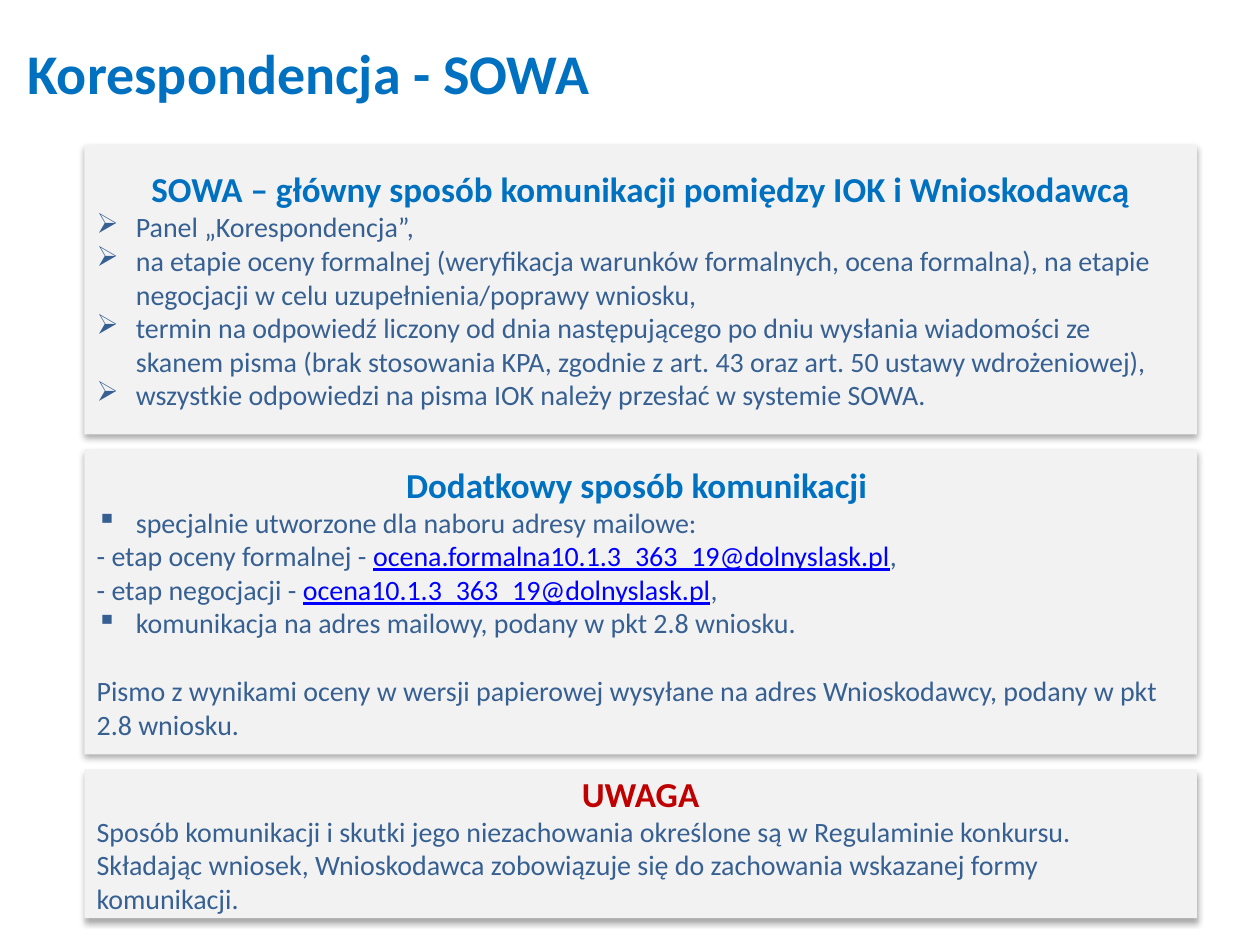
from dataclasses import dataclass

from lxml import etree
from pptx import Presentation
from pptx.dml.color import RGBColor
from pptx.enum.shapes import MSO_SHAPE
from pptx.enum.text import MSO_ANCHOR, MSO_AUTO_SIZE, PP_ALIGN
from pptx.oxml.ns import qn
from pptx.slide import Slide
from pptx.text.text import _Paragraph
from pptx.util import Cm, Length, Pt

RECTANGLE = MSO_SHAPE.RECTANGLE
MIDDLE = MSO_ANCHOR.MIDDLE
FIT_SHAPE = MSO_AUTO_SIZE.SHAPE_TO_FIT_TEXT
LEFT, CENTER = PP_ALIGN.LEFT, PP_ALIGN.CENTER


@dataclass(frozen=True)
class Theme:
    font: str = "Calibri"
    heading: RGBColor = RGBColor(0x00, 0x70, 0xC0)
    warning: RGBColor = RGBColor(0xC0, 0x00, 0x00)
    body: RGBColor = RGBColor(0x37, 0x60, 0x92)
    address: RGBColor = RGBColor(0x00, 0x00, 0xFF)
    panel: RGBColor = RGBColor(0xF2, 0xF2, 0xF2)
    shadow: str = "000000"
    title_size: Length = Pt(32)
    heading_size: Length = Pt(20)
    body_size: Length = Pt(16)
    line_gap: Length = Pt(19.5)


THEME = Theme()
PANEL_LEFT, PANEL_TOP, PANEL_WIDTH, PANEL_GAP = Cm(1.7), Cm(2.92), Cm(22.43), Cm(0.3)
BULLET_INDENT = Cm(0.79)


@dataclass(frozen=True)
class Line:
    text: str
    bullet: str = ""
    address: str = ""
    ending: str = ""
    space_before: Length = Pt(0)


@dataclass(frozen=True)
class Panel:
    height: Length
    heading: str
    color: RGBColor
    lines: tuple[Line, ...]


ARROW, SQUARE = "➢", "▪"
PANELS = (
    Panel(Cm(5.84), "SOWA – główny sposób komunikacji pomiędzy IOK i Wnioskodawcą", THEME.heading, (
        Line("Panel „Korespondencja”,", ARROW),
        Line("na etapie oceny formalnej (weryfikacja warunków formalnych, ocena formalna), "
             "na etapie negocjacji w celu uzupełnienia/poprawy wniosku,", ARROW),
        Line("termin na odpowiedź liczony od dnia następującego po dniu wysłania wiadomości ze skanem "
             "pisma (brak stosowania KPA, zgodnie z art. 43 oraz art. 50 ustawy wdrożeniowej),", ARROW),
        Line("wszystkie odpowiedzi na pisma IOK należy przesłać w systemie SOWA.", ARROW),
    )),
    Panel(Cm(6.15), "Dodatkowy sposób komunikacji ", THEME.heading, (
        Line("specjalnie utworzone dla naboru adresy mailowe:", SQUARE),
        Line("- etap oceny formalnej - ", address="ocena.formalna10.1.3_363_19@dolnyslask.pl", ending=","),
        Line("- etap negocjacji - ", address="ocena10.1.3_363_19@dolnyslask.pl", ending=","),
        Line("komunikacja na adres mailowy, podany w pkt 2.8 wniosku.", SQUARE),
        Line("Pismo z wynikami oceny w wersji papierowej wysyłane na adres Wnioskodawcy, "
             "podany w pkt 2.8 wniosku.", space_before=THEME.line_gap),
    )),
    Panel(Cm(3), "UWAGA", THEME.warning, (
        Line("Sposób komunikacji i skutki jego niezachowania określone są w Regulaminie konkursu. \n"
             "Składając wniosek, Wnioskodawca zobowiązuje się do zachowania wskazanej formy komunikacji."),
    )),
)


def add_run(paragraph: _Paragraph, text: str, size: Length, color: RGBColor,
            bold: bool = False, underline: bool = False) -> None:
    """Add one formatted run, turning newlines into line breaks."""
    for index, part in enumerate(text.split("\n")):
        if index:
            paragraph.add_line_break()
        run = paragraph.add_run()
        run.text = part
        run.font.name, run.font.size = THEME.font, size
        run.font.bold, run.font.underline = bold, underline
        run.font.color.rgb = color


def add_bullet(paragraph: _Paragraph, character: str) -> None:
    """Give a paragraph a hanging bullet."""
    properties = paragraph._p.get_or_add_pPr()
    properties.set("marL", str(BULLET_INDENT))
    properties.set("indent", str(-BULLET_INDENT))
    etree.SubElement(properties, qn("a:buChar"), char=character)


def add_line(paragraph: _Paragraph, line: Line) -> None:
    """Write one body line with its bullet and e-mail address."""
    if line.bullet:
        add_bullet(paragraph, line.bullet)
    paragraph.alignment = LEFT
    paragraph.space_before = line.space_before
    add_run(paragraph, line.text, THEME.body_size, THEME.body)
    if line.address:
        add_run(paragraph, line.address, THEME.body_size, THEME.address, underline=True)
        add_run(paragraph, line.ending, THEME.body_size, THEME.body)


def add_panel(slide: Slide, panel: Panel, top: Length) -> None:
    """Draw a shadowed panel with a heading and body lines."""
    shape = slide.shapes.add_shape(RECTANGLE, PANEL_LEFT, top, PANEL_WIDTH, panel.height)
    shape.fill.solid()
    shape.fill.fore_color.rgb = THEME.panel
    shape.line.fill.background()
    shape.shadow.inherit = False
    effects = shape._element.spPr.find(qn("a:effectLst"))
    shadow = etree.SubElement(effects, qn("a:outerShdw"), blurRad=str(Pt(3.5)), dist=str(Pt(2.2)),
                              dir="5400000", rotWithShape="0")
    color = etree.SubElement(shadow, qn("a:srgbClr"), val=THEME.shadow)
    etree.SubElement(color, qn("a:alpha"), val="32000")
    frame = shape.text_frame
    frame.word_wrap = True
    frame.vertical_anchor = MIDDLE
    heading = frame.paragraphs[0]
    heading.alignment = CENTER
    add_run(heading, panel.heading, THEME.heading_size, panel.color, bold=True)
    for line in panel.lines:
        add_line(frame.add_paragraph(), line)


def add_title(slide: Slide, text: str) -> None:
    """Write the slide title."""
    frame = slide.shapes.add_textbox(Cm(0.3), Cm(0.66), Cm(11.86), Cm(1.63)).text_frame
    frame.word_wrap = False
    frame.auto_size = FIT_SHAPE
    add_run(frame.paragraphs[0], text, THEME.title_size, THEME.heading, bold=True)


def main() -> None:
    """Build and save the slide."""
    presentation = Presentation()
    presentation.slide_width, presentation.slide_height = Cm(25.4), Cm(19.05)
    slide = presentation.slides.add_slide(presentation.slide_layouts[6])
    add_title(slide, "Korespondencja - SOWA")
    top = PANEL_TOP
    for panel in PANELS:
        add_panel(slide, panel, top)
        top += panel.height + PANEL_GAP
    presentation.save("out.pptx")


if __name__ == "__main__":
    main()
